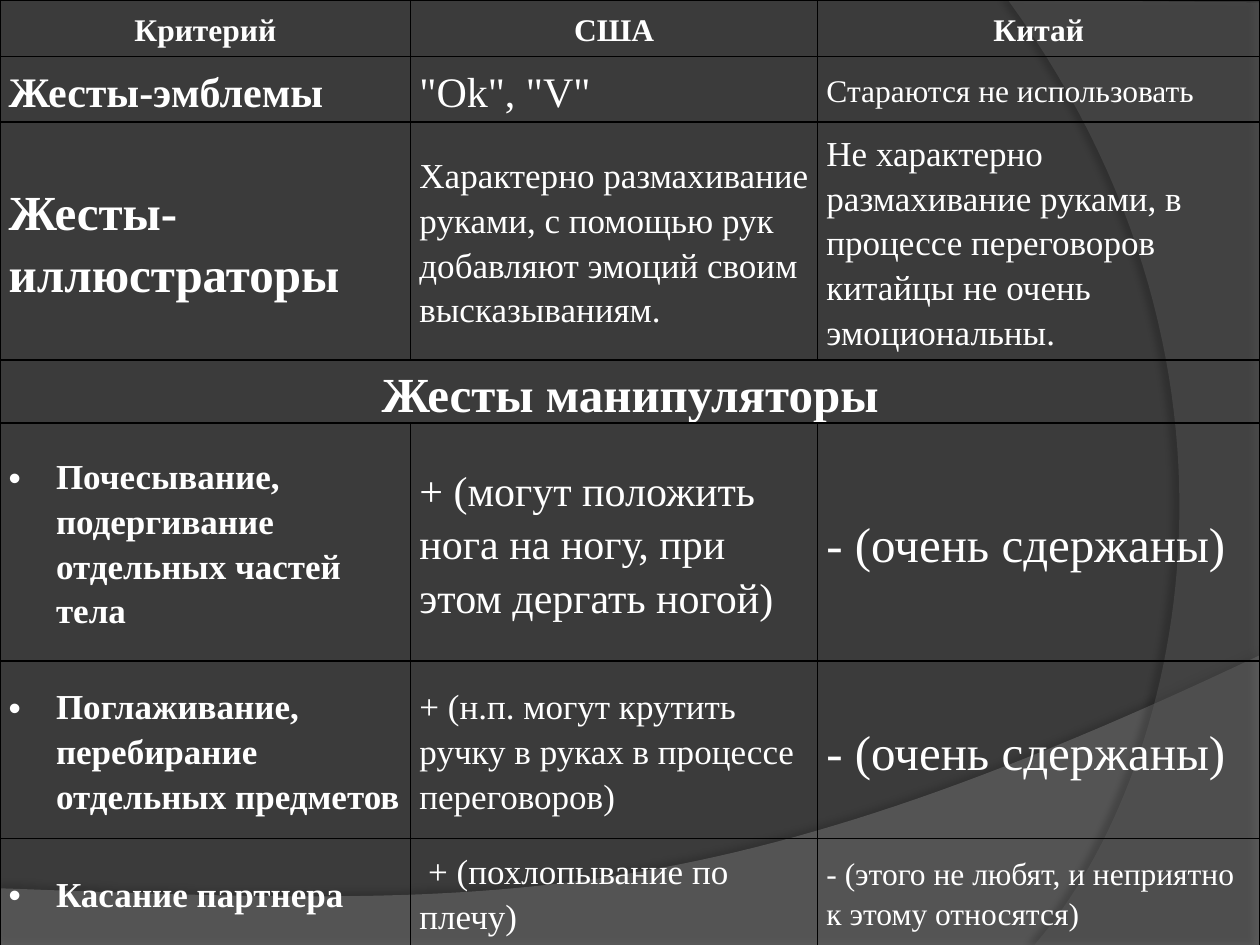
"""Build a slide with a table that compares gestures in two countries."""
from dataclasses import dataclass

import pptx
import pptx.dml.color
import pptx.enum.text
import pptx.oxml
import pptx.oxml.ns
import pptx.util
from pptx.util import Pt

RGB = pptx.dml.color.RGBColor
ALIGN = pptx.enum.text.PP_ALIGN
BACK = RGB(0x3B, 0x3B, 0x3B)
WAVE = RGB(0x7F, 0x7F, 0x7F)
ARC = RGB(0x5E, 0x5E, 0x5E)
WHITE = RGB(0xFF, 0xFF, 0xFF)
BLACK = RGB(0, 0, 0)
NS = pptx.oxml.ns.nsdecls("a")
FONT = "Times New Roman"
STEPS = 60
COLS = (234.7, 232.6, 252.7)
ROWS = (32.4, 37.4, 136, 36, 136, 101.5, 61.2)
CELL = {
    "margin_left": Pt(5), "margin_right": Pt(5),
    "margin_top": 0, "margin_bottom": 0,
    "vertical_anchor": pptx.enum.text.MSO_ANCHOR.MIDDLE,
}

Point = tuple[float, float]


@dataclass
class Item:
    text: str
    size: float
    bold: bool = False
    mid: bool = False
    dot: bool = False


@dataclass
class Swoop:
    edge: list[Point]
    curve: tuple[Point, Point, Point]
    color: RGB
    alpha: int
    shade: int
    gap: float
    angle: int


SWOOPS = (
    Swoop([(0, 507.6), (0, 540.7), (720, 540.7), (720, 374.4)],
          ((402.5, 524.9), (281.5, 517.7), (0, 507.6)),
          WAVE, 45, 35, 3.5, 270),
    Swoop([(720, 1.4), (720, 540), (591.1, 540)],
          ((673.2, 445.7), (733, 216), (576, 0)),
          ARC, 40, 45, 4, 180),
)


def head(text: str) -> Item:
    return Item(text, 18, bold=True, mid=True)


def point(text: str) -> Item:
    return Item(text, 20, bold=True, dot=True)


CALM = Item("- (очень сдержаны)", 28)
GRID = (
    (head("Критерий"), head("США"), head("Китай")),
    (Item("Жесты-эмблемы", 24, bold=True), Item('"Ok", "V"', 24),
     Item("Стараются не использовать", 18)),
    (Item("Жесты-иллюстраторы", 28, bold=True),
     Item("Характерно размахивание руками, с помощью рук добавляют "
          "эмоций своим высказываниям.", 20),
     Item("Не характерно размахивание руками, в процессе переговоров "
          "китайцы не очень эмоциональны.", 20)),
    (Item("Жесты манипуляторы", 28, bold=True, mid=True),),
    (point("Почесывание, подергивание отдельных частей тела"),
     Item("+ (могут положить нога на ногу, при этом дергать ногой)", 24), CALM),
    (point("Поглаживание, перебирание отдельных предметов"),
     Item("+ (н.п. могут крутить ручку в руках в процессе переговоров)", 20),
     CALM),
    (point("Касание партнера"), Item(" + (похлопывание по плечу)", 20),
     Item("- (этого не любят, и неприятно к этому относятся)", 18)),
)


def apply(target: object, style: dict[str, object]) -> None:
    for name, value in style.items():
        setattr(target, name, value)


def bend(start: Point, curve: tuple[Point, Point, Point]) -> list[Point]:
    knots = (start, *curve)
    dots = []
    for step in range(1, STEPS + 1):
        t = step / STEPS
        parts = ((1 - t) ** 3, 3 * t * (1 - t) ** 2, 3 * t * t * (1 - t), t ** 3)
        dots.append(tuple(sum(p * k[axis] for p, k in zip(parts, knots))
                          for axis in (0, 1)))
    return dots


def draw_swoop(slide: pptx.slide.Slide, item: Swoop) -> None:
    dots = [(Pt(x), Pt(y))
            for x, y in item.edge + bend(item.edge[-1], item.curve)]
    pen = slide.shapes.build_freeform(*dots[0])
    pen.add_line_segments(dots[1:], close=True)
    shape = pen.convert_to_shape()
    shape.line.fill.background()
    shape.fill.solid()
    shape.fill.fore_color.rgb = item.color
    props = shape._element.spPr
    tint = props.find(".//" + pptx.oxml.ns.qn("a:srgbClr"))
    tint.append(pptx.oxml.parse_xml(f'<a:alpha {NS} val="{item.alpha * 1000}"/>'))
    props.append(pptx.oxml.parse_xml(
        f'<a:effectLst {NS}><a:outerShdw blurRad="{Pt(4)}" '
        f'dist="{Pt(item.gap)}" dir="{item.angle * 60000}" algn="ctr" '
        f'rotWithShape="0"><a:srgbClr val="{BLACK}">'
        f'<a:alpha val="{item.shade * 1000}"/></a:srgbClr>'
        f'</a:outerShdw></a:effectLst>'))


def frame(cell: pptx.table._Cell) -> None:
    props = cell._tc.get_or_add_tcPr()
    for side in "LRTB":
        props.append(pptx.oxml.parse_xml(
            f'<a:ln{side} {NS} w="{Pt(1)}"><a:solidFill>'
            f'<a:srgbClr val="{BLACK}"/></a:solidFill></a:ln{side}>'))
    cell.fill.background()
    apply(cell, CELL)


def write(cell: pptx.table._Cell, item: Item) -> None:
    para = cell.text_frame.paragraphs[0]
    if item.dot:
        props = para._p.get_or_add_pPr()
        props.set("marL", str(Pt(27)))
        props.set("indent", str(-Pt(27)))
        props.append(pptx.oxml.parse_xml(f'<a:buFont {NS} typeface="Arial"/>'))
        props.append(pptx.oxml.parse_xml(f'<a:buChar {NS} char="•"/>'))
    apply(para, {"alignment": ALIGN.CENTER if item.mid else ALIGN.LEFT,
                 "line_spacing": 1.15})
    run = para.add_run()
    run.text = item.text
    apply(run.font, {"name": FONT, "size": Pt(item.size), "bold": item.bold})
    run.font.color.rgb = WHITE


def draw_table(slide: pptx.slide.Slide) -> None:
    table = slide.shapes.add_table(
        len(ROWS), len(COLS), 0, 0, Pt(sum(COLS)), Pt(sum(ROWS))).table
    apply(table, {"first_row": False, "horz_banding": False})
    for col, width in zip(table.columns, COLS):
        col.width = Pt(width)
    for row, height in zip(table.rows, ROWS):
        row.height = Pt(height)
    for cell in table.iter_cells():
        frame(cell)
    for r, items in enumerate(GRID):
        if len(items) == 1:
            table.cell(r, 0).merge(table.cell(r, len(COLS) - 1))
        for c, item in enumerate(items):
            write(table.cell(r, c), item)


def main() -> None:
    deck = pptx.Presentation()
    apply(deck, {"slide_width": Pt(720), "slide_height": Pt(540)})
    slide = deck.slides.add_slide(deck.slide_layouts[6])
    slide.background.fill.solid()
    slide.background.fill.fore_color.rgb = BACK
    for item in SWOOPS:
        draw_swoop(slide, item)
    draw_table(slide)
    deck.save("out.pptx")


if __name__ == "__main__":
    main()
